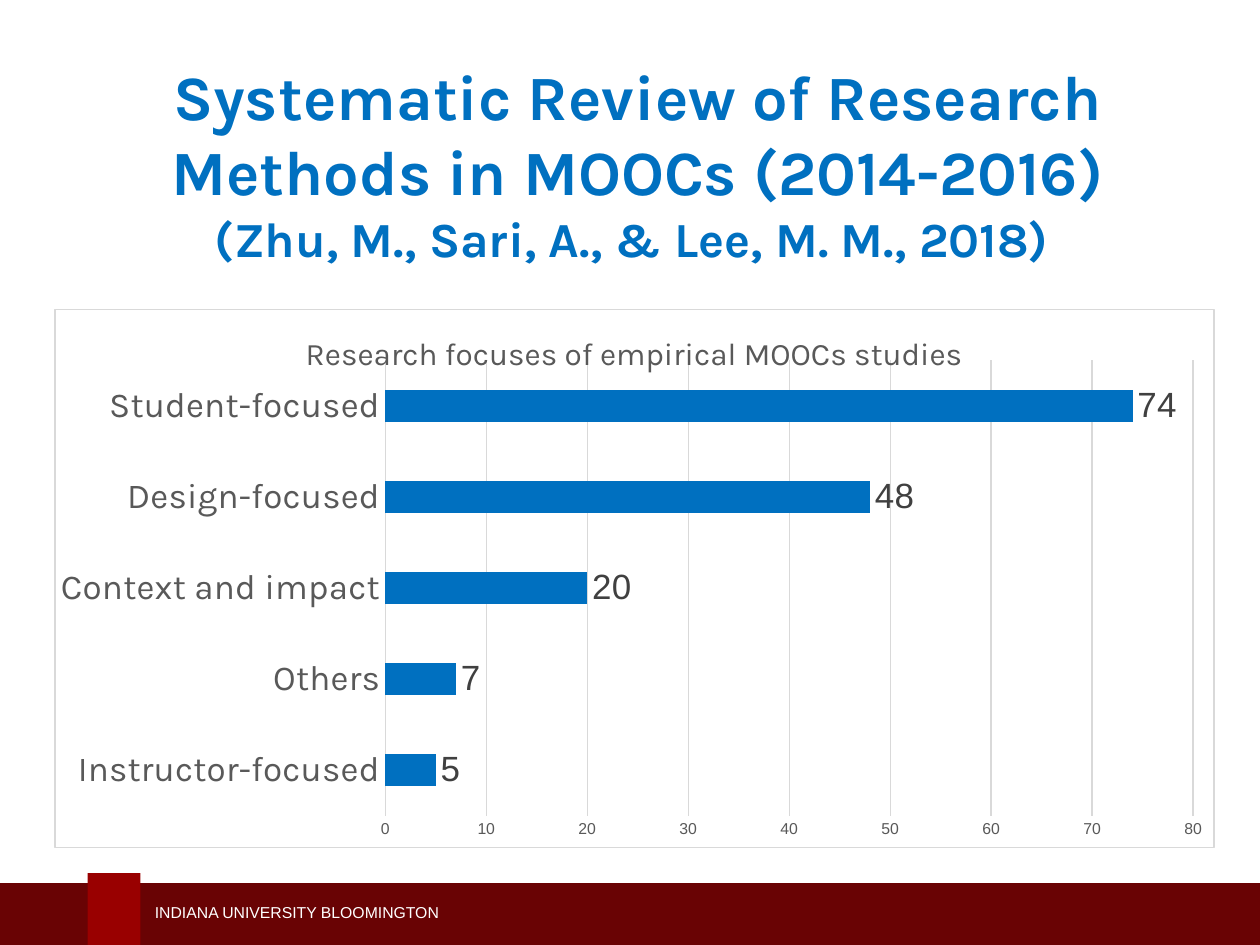
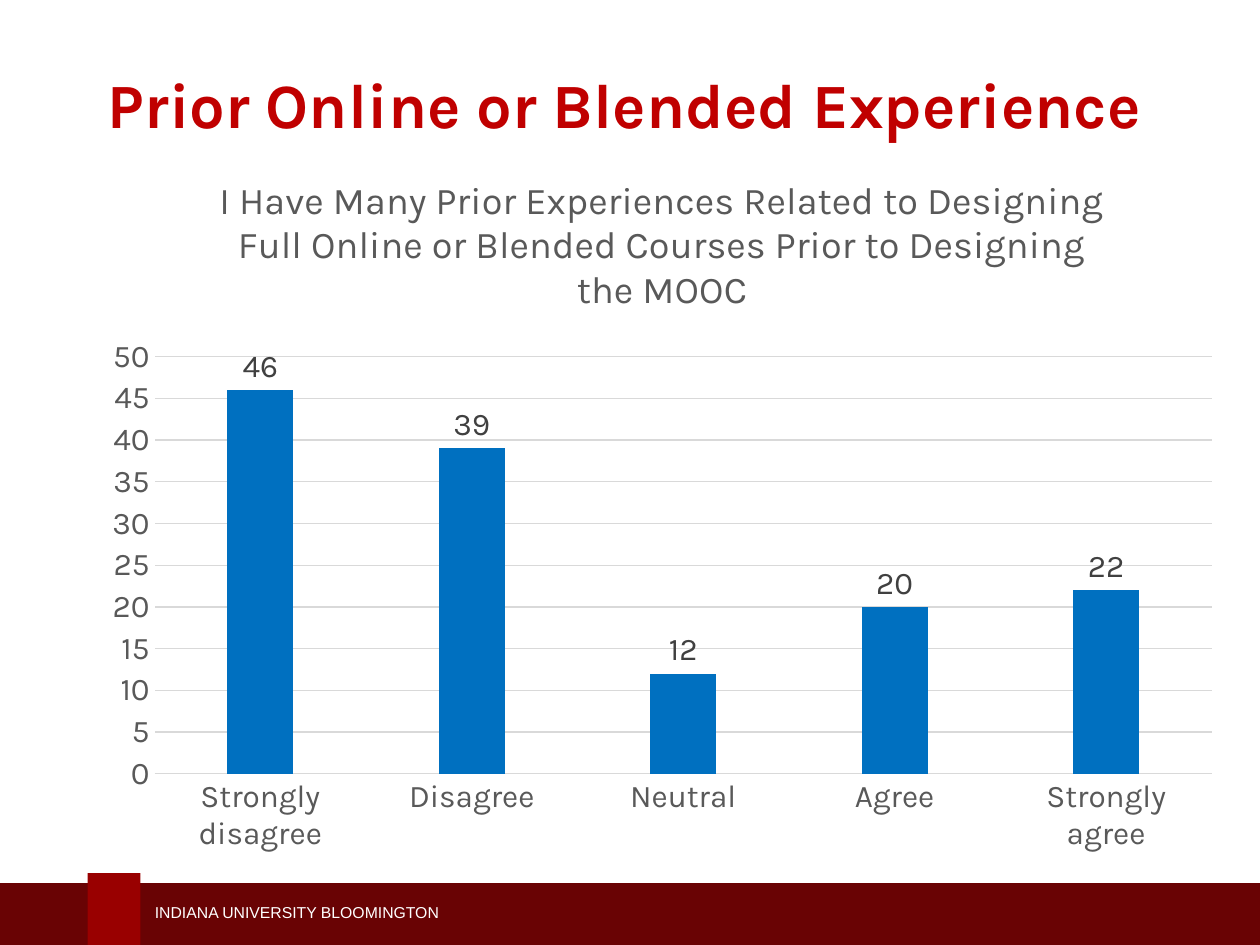
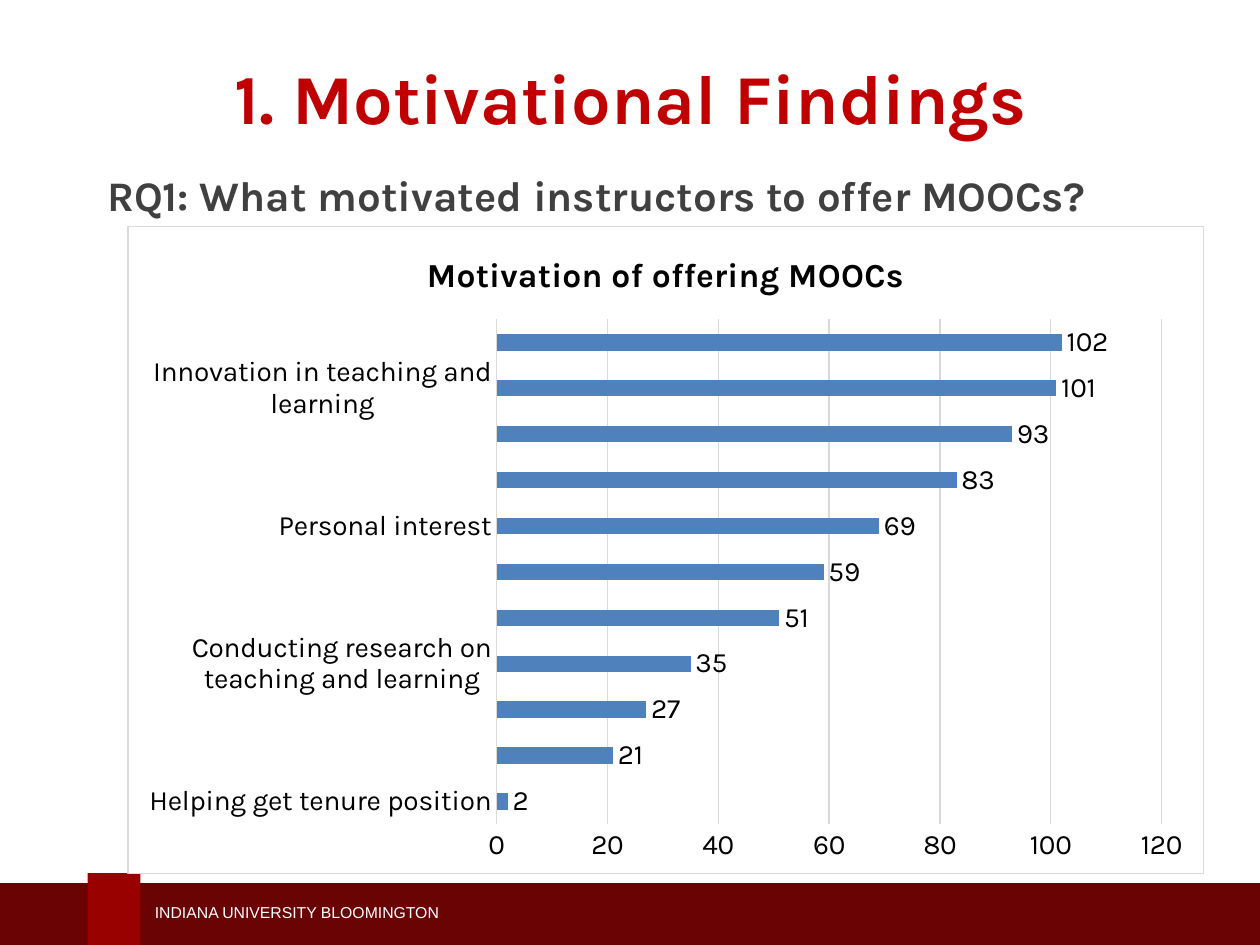
import dataclasses

import lxml.etree
import pptx
import pptx.chart.data
import pptx.dml.color
import pptx.enum.chart
import pptx.enum.shapes
import pptx.enum.text
import pptx.oxml
import pptx.oxml.ns
import pptx.util

Pt = pptx.util.Pt
qn = pptx.oxml.ns.qn
rgb = pptx.dml.color.RGBColor.from_string
Kind = pptx.enum.chart.XL_CHART_TYPE
Align = pptx.enum.text.PP_ALIGN
Anchor = pptx.enum.text.MSO_ANCHOR


@dataclasses.dataclass
class Theme:
    sans: str = "Arial"
    face: str = "Karla"
    blue: str = "0070C0"
    steel: str = "4F81BD"
    red: str = "C00000"
    band: str = "690304"
    tab: str = "990000"
    white: str = "FFFFFF"
    black: str = "000000"
    gray: str = "595959"
    dark: str = "404040"
    grid: str = "D9D9D9"
    hair: float = 0.75
    foot: float = 9
    tick: float = 9
    small: float = 16
    text: float = 18
    large: float = 20
    lead: float = 24
    sub: float = 28
    head: float = 36
    big: float = 40


look = Theme()


def style(font, size, color, face=look.face, bold=False):
    font.size, font.name, font.bold = Pt(size), face, bold
    font.color.rgb = rgb(color)


def say(frame, text, align=Align.LEFT, rest=None, size=look.text, **form):
    """Write lines into the first paragraph; rest is the size after line one."""
    para = frame.paragraphs[0]
    para.alignment = align
    for row, line in enumerate(text.split("\n")):
        if row:
            para.add_line_break()
        run = para.add_run()
        run.text = line
        style(run.font, rest if row and rest else size, **form)
    return para


pages = [
    dict(
        title="Systematic Review of Research Methods in MOOCs (2014-2016)\n"
              "(Zhu, M., Sari, A., & Lee, M. M., 2018) ",
        at=(41, 21, 646.6, 143.3), size=look.head, color=look.blue,
        kind=Kind.BAR_CLUSTERED, area=(31, 176.4, 663.1, 308.2),
        name="Research focuses of empirical MOOCs studies",
        top=dict(size=18, color=look.gray),
        cats=dict(size=look.large, color=look.gray),
        vals=dict(size=look.tick, color=look.gray, face=look.sans),
        tags=dict(size=look.large, color=look.dark, face=look.sans),
        bar=look.blue, gap=182, lap=0, high=80, step=10, frame=True,
        plot=dict(x=0.285, y=0.095, w=0.697, h=0.846),
        data={"Instructor-focused": 5, "Others": 7, "Context and impact": 20,
              "Design-focused": 48, "Student-focused": 74},
    ),
    dict(
        title="Prior Online or Blended Experience",
        at=(25.2, 33.8, 663.1, 50.4), size=look.head, color=look.red,
        kind=Kind.COLUMN_CLUSTERED, area=(51.1, 83.5, 654.5, 411.8),
        name="I Have Many Prior Experiences Related to Designing Full Online "
             "or Blended Courses Prior to Designing the MOOC",
        top=dict(size=21.6, color=look.gray),
        cats=dict(size=look.text, color=look.gray),
        vals=dict(size=look.text, color=look.gray),
        tags=dict(size=look.text, color=look.dark),
        bar=look.blue, gap=219, lap=-27, high=50, step=5, frame=False,
        data={"Strongly disagree": 46, "Disagree": 39, "Neutral": 12,
              "Agree": 20, "Strongly agree": 22},
    ),
    dict(
        title="1. Motivational Findings",
        at=(45.4, 30.2, 630, 50.4), size=look.big, color=look.red,
        lead="RQ1: What motivated instructors to offer MOOCs?",
        kind=Kind.BAR_CLUSTERED, area=(72.7, 128.9, 615.6, 370.8),
        name="Motivation of offering MOOCs",
        top=dict(size=19.2, color=look.black, bold=True),
        cats=dict(size=look.small, color=look.black),
        vals=dict(size=look.small, color=look.black),
        tags=dict(size=look.small, color=look.black),
        bar=look.steel, gap=182, lap=0, high=120, step=20, frame=True,
        data={"Helping get tenure position": 2,
              "Building national identity": 21,
              "Other": 27,
              "Conducting research on teaching and learning": 35,
              "Encouragement of the university": 51,
              "Building personal reputation": 59,
              "Personal interest": 69,
              "Building institutional reputation": 83,
              "Increasing student access to higher education worldwide": 93,
              "Innovation in teaching and learning": 101,
              "Experiencing teaching and connecting to a large and diverse "
              "audience throughout the world": 102},
    ),
]

deck = pptx.Presentation()
deck.slide_width, deck.slide_height = Pt(720), Pt(540)

for page in pages:
    slide = deck.slides.add_slide(deck.slide_layouts[5])

    # Footer
    for color, spot in ((look.band, (-2, 504.7, 726.5, 36)),
                        (look.tab, (50, 499, 30.3, 42))):
        block = slide.shapes.add_shape(
            pptx.enum.shapes.MSO_SHAPE.RECTANGLE, *map(Pt, spot))
        block.shadow.inherit = False
        block.fill.solid()
        block.fill.fore_color.rgb = rgb(color)
        block.line.fill.background()
    foot = slide.shapes.add_textbox(*map(Pt, (81.4, 512, 284.4, 18))).text_frame
    foot.word_wrap = True
    foot.vertical_anchor = Anchor.MIDDLE
    say(foot, "INDIANA UNIVERSITY BLOOMINGTON", size=look.foot,
        color=look.white, face=look.sans)

    # Title
    title = slide.shapes.title
    title.left, title.top, title.width, title.height = map(Pt, page["at"])
    title.text_frame.auto_size = pptx.enum.text.MSO_AUTO_SIZE.NONE
    title.text_frame.vertical_anchor = Anchor.MIDDLE
    say(title.text_frame, page["title"], align=Align.CENTER, rest=look.sub,
        size=page["size"], color=page["color"], bold=True)

    # Question
    if "lead" in page:
        box = slide.shapes.add_textbox(*map(Pt, (18, 73.4, 670.3, 62)))
        box.text_frame.word_wrap = True
        para = say(box.text_frame, page["lead"], size=look.lead,
                   color=look.dark, bold=True)
        para.line_spacing, para.space_after = 1.7, Pt(18)
        box.text_frame.margin_left = Pt(43.2)

    # Chart
    data = pptx.chart.data.CategoryChartData()
    data.categories = list(page["data"])
    data.add_series("Series 1", list(page["data"].values()))
    chart = slide.shapes.add_chart(
        page["kind"], *map(Pt, page["area"]), data).chart
    style(chart.font, **page["vals"])
    chart.has_legend = False
    chart.has_title = True
    say(chart.chart_title.text_frame, page["name"], align=Align.CENTER,
        **page["top"])
    chart.chart_title.include_in_layout = False

    cat, val = chart.category_axis, chart.value_axis
    for axis, form in ((cat, page["cats"]), (val, page["vals"])):
        axis.major_tick_mark = pptx.enum.chart.XL_TICK_MARK.NONE
        axis.minor_tick_mark = pptx.enum.chart.XL_TICK_MARK.NONE
        style(axis.tick_labels.font, **form)
    val.minimum_scale, val.maximum_scale = 0, page["high"]
    val.major_unit = page["step"]
    val.has_major_gridlines = True
    val.format.line.fill.background()
    for line in (cat.format.line, val.major_gridlines.format.line):
        line.color.rgb = rgb(look.grid)
        line.width = Pt(look.hair)

    plot = chart.plots[0]
    plot.vary_by_categories = False
    plot.gap_width, plot.overlap = page["gap"], page["lap"]
    fill = plot.series[0].format.fill
    fill.solid()
    fill.fore_color.rgb = rgb(page["bar"])
    plot.has_data_labels = True
    tags = plot.data_labels
    tags.show_value = True
    tags.number_format, tags.number_format_is_linked = "0", False
    tags.position = pptx.enum.chart.XL_LABEL_POSITION.OUTSIDE_END
    style(tags.font, **page["tags"])

    if page["frame"]:
        chart.element.find(qn("c:txPr")).addprevious(pptx.oxml.parse_xml(
            f'<c:spPr {pptx.oxml.ns.nsdecls("c", "a")}>'
            f'<a:solidFill><a:srgbClr val="{look.white}"/></a:solidFill>'
            f'<a:ln w="{Pt(look.hair)}"><a:solidFill>'
            f'<a:srgbClr val="{look.grid}"/></a:solidFill></a:ln></c:spPr>'))
    if "plot" in page:
        area = chart.element.find(".//" + qn("c:plotArea"))
        for old in area.findall(qn("c:layout")):
            area.remove(old)
        layout = lxml.etree.Element(qn("c:layout"))
        manual = lxml.etree.SubElement(layout, qn("c:manualLayout"))
        rules = dict(layoutTarget="inner", xMode="edge", yMode="edge")
        for key, value in (rules | page["plot"]).items():
            lxml.etree.SubElement(manual, qn("c:" + key), val=str(value))
        area.insert(0, layout)

deck.save("out.pptx")
